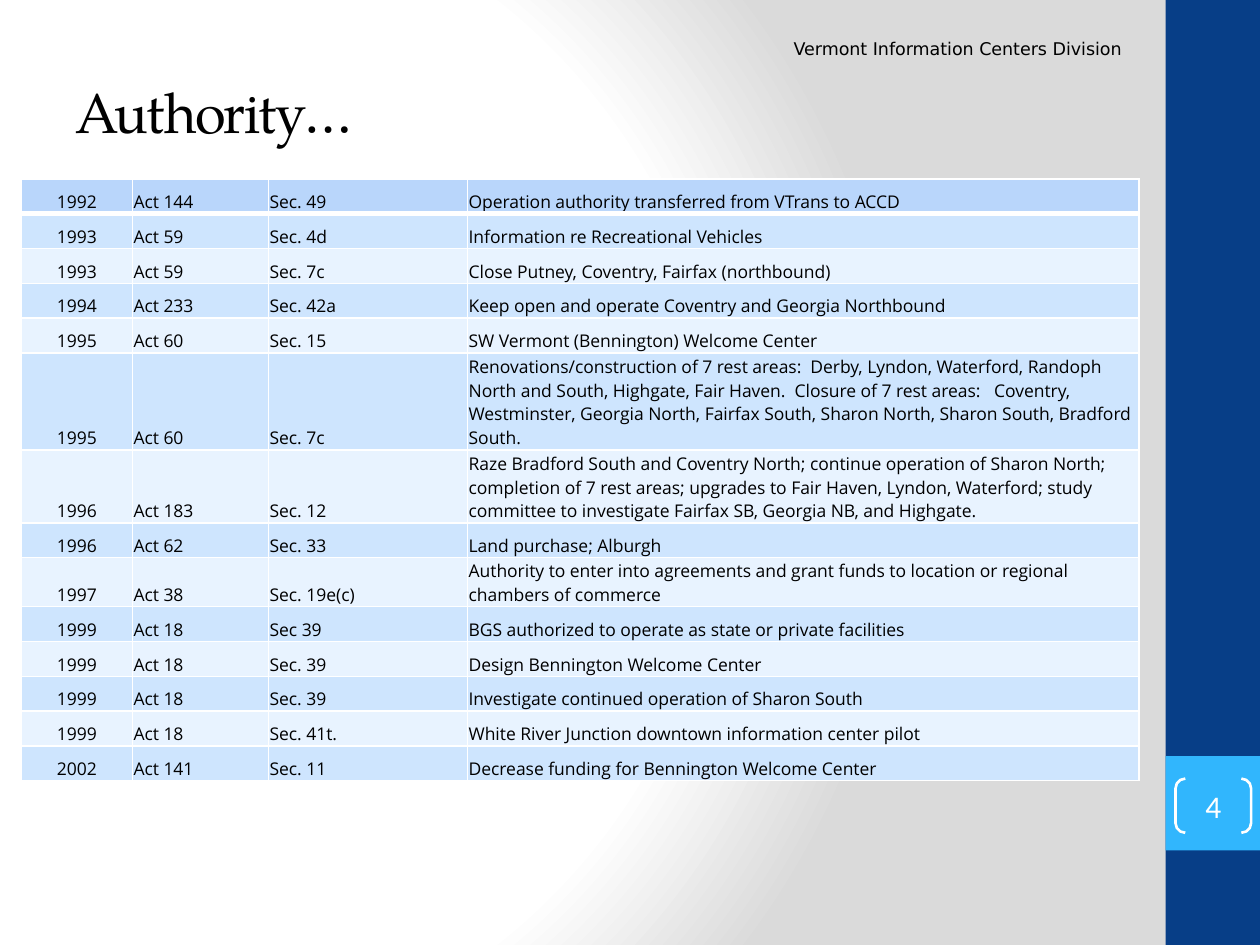
from lxml.etree import SubElement
from pptx import Presentation
from pptx.dml.color import RGBColor
from pptx.enum.shapes import MSO_SHAPE
from pptx.enum.text import MSO_ANCHOR, PP_ALIGN
from pptx.oxml import parse_xml
from pptx.oxml.ns import nsdecls, qn
from pptx.util import Inches, Pt

ACTS = [
    ("1992", "Act 144", "Sec. 49", "Operation authority transferred from VTrans to ACCD"),
    ("1993", "Act 59", "Sec. 4d", "Information re Recreational Vehicles"),
    ("1993", "Act 59", "Sec. 7c", "Close Putney, Coventry, Fairfax (northbound)"),
    ("1994", "Act 233", "Sec. 42a", "Keep open and operate Coventry and Georgia Northbound"),
    ("1995", "Act 60", "Sec. 15", "SW Vermont (Bennington) Welcome Center"),
    ("1995", "Act 60", "Sec. 7c",
     "Renovations/construction of 7 rest areas:  Derby, Lyndon, Waterford, Randoph North and South, "
     "Highgate, Fair Haven.  Closure of 7 rest areas:   Coventry, Westminster, Georgia North, "
     "Fairfax South, Sharon North, Sharon South, Bradford South."),
    ("1996", "Act 183", "Sec. 12",
     "Raze Bradford South and Coventry North; continue operation of Sharon North; completion of "
     "7 rest areas; upgrades to Fair Haven, Lyndon, Waterford; study committee to investigate "
     "Fairfax SB, Georgia NB, and Highgate."),
    ("1996", "Act 62", "Sec. 33", "Land purchase; Alburgh"),
    ("1997", "Act 38", "Sec. 19e(c)",
     "Authority to enter into agreements and grant funds to location or regional chambers of commerce"),
    ("1999", "Act 18", "Sec 39", "BGS authorized to operate as state or private facilities"),
    ("1999", "Act 18", "Sec. 39", "Design Bennington Welcome Center"),
    ("1999", "Act 18", "Sec. 39", "Investigate continued operation of Sharon South"),
    ("1999", "Act 18", "Sec. 41t.", "White River Junction downtown information center pilot"),
    ("2002", "Act 141", "Sec. 11", "Decrease funding for Bennington Welcome Center"),
]
COLUMN_WIDTHS = [0.88, 1.08, 1.58, 5.33]
TABLE_WIDTH = 8.88
CHARACTERS_PER_LINE = 73
HEIGHTS_BY_LINE_COUNT = {1: 0.276, 2: 0.39, 3: 0.58, 4: 0.77}
HEADER_FILL = "B9D6FB"
BAND_FILLS = ["E8F3FF", "CEE5FE"]
BACKGROUND_STOPS = [(0, "FFFFFF"), (75, "FFFFFF"), (100, "DADADA")]
SIDEBAR = [((9.25, 0, 0.75, 7.5), "073E87"), ((9.25, 6, 0.75, 0.75), "31B6FD")]


def color(value):
    return RGBColor.from_string(value)


def set_background(slide):
    stops = "".join(
        f'<a:gs pos="{position * 1000}"><a:srgbClr val="{value}"/></a:gs>'
        for position, value in BACKGROUND_STOPS
    )
    slide.background.fill.solid()
    properties = slide.background._cSld.bg.bgPr
    properties.replace(properties[0], parse_xml(
        f'<a:gradFill {nsdecls("a")} rotWithShape="1"><a:gsLst>{stops}</a:gsLst>'
        '<a:path path="circle"><a:fillToRect l="20000" t="50000" r="100000" b="50000"/></a:path>'
        '</a:gradFill>'
    ))


def write(text_frame, text, size, font, font_color="000000", align=PP_ALIGN.LEFT):
    text_frame.text = text
    paragraph = text_frame.paragraphs[0]
    paragraph.alignment = align
    run = paragraph.runs[0]
    run.font.size = Pt(size)
    run.font.name = font
    run.font.color.rgb = color(font_color)
    return run


def add_text(slide, box, *style, anchor=MSO_ANCHOR.TOP, **options):
    text_frame = slide.shapes.add_textbox(*map(Inches, box)).text_frame
    text_frame.word_wrap = True
    text_frame.vertical_anchor = anchor
    return write(text_frame, *style, **options)


def add_border(cell, side, width):
    line = SubElement(cell._tc.get_or_add_tcPr(), qn(f"a:ln{side}"), w=str(Pt(width)))
    fill = SubElement(line, qn("a:solidFill"))
    SubElement(fill, qn("a:srgbClr"), val="FFFFFF")


def row_height(act):
    line_count = -(-len(act[-1]) // CHARACTERS_PER_LINE)
    return HEIGHTS_BY_LINE_COUNT[line_count]


def add_acts_table(slide):
    heights = [row_height(act) for act in ACTS]
    table = slide.shapes.add_table(
        len(ACTS), len(COLUMN_WIDTHS), Inches(0.17), Inches(1.42),
        Inches(TABLE_WIDTH), Inches(sum(heights)),
    ).table
    for column, width in zip(table.columns, COLUMN_WIDTHS):
        column.width = Inches(width)
    for row_index, act in enumerate(ACTS):
        table.rows[row_index].height = Inches(heights[row_index])
        for column_index, text in enumerate(act):
            cell = table.cell(row_index, column_index)
            cell.margin_left = cell.margin_right = cell.margin_top = Inches(0.01)
            cell.margin_bottom = 0
            cell.vertical_anchor = MSO_ANCHOR.BOTTOM
            align = PP_ALIGN.CENTER if column_index == 0 else PP_ALIGN.LEFT
            write(cell.text_frame, text, 10, "Open Sans", align=align)
            for side in "LRTB":
                under_header = (row_index, side) in [(0, "B"), (1, "T")]
                add_border(cell, side, 3 if under_header else 1)
            cell.fill.solid()
            cell.fill.fore_color.rgb = color(BAND_FILLS[row_index % 2] if row_index else HEADER_FILL)


def add_sidebar(slide):
    for box, fill in SIDEBAR:
        shape = slide.shapes.add_shape(MSO_SHAPE.RECTANGLE, *map(Inches, box))
        shape.shadow.inherit = False
        shape.fill.solid()
        shape.fill.fore_color.rgb = color(fill)
        shape.line.fill.background()


def add_page_number(slide):
    bracket = slide.shapes.add_shape(
        MSO_SHAPE.DOUBLE_BRACKET, Inches(9.33), Inches(6.18), Inches(0.6), Inches(0.43)
    )
    bracket.shadow.inherit = False
    bracket.adjustments[0] = 0.18
    bracket.fill.background()
    bracket.line.color.rgb = color("FFFFFF")
    bracket.line.width = Pt(1.5)
    text_frame = bracket.text_frame
    text_frame.margin_left = text_frame.margin_right = 0
    text_frame.margin_top = text_frame.margin_bottom = 0
    text_frame.vertical_anchor = MSO_ANCHOR.MIDDLE
    write(text_frame, "4", 18, "Calibri", "FFFFFF", PP_ALIGN.CENTER)


def main():
    presentation = Presentation()
    presentation.slide_width = Inches(10)
    presentation.slide_height = Inches(7.5)
    slide = presentation.slides.add_slide(presentation.slide_layouts[6])
    set_background(slide)
    add_sidebar(slide)
    title = add_text(slide, (0.5, 0.52, 8.33, 0.73), "Authority…", 32, "TeX Gyre Pagella",
                     anchor=MSO_ANCHOR.MIDDLE)
    title.font._element.set("spc", "-100")
    add_acts_table(slide)
    add_page_number(slide)
    add_text(slide, (5.92, 0.25, 3.08, 0.27), "Vermont Information Centers Division", 10,
             "DejaVu Sans", align=PP_ALIGN.RIGHT)
    presentation.save("out.pptx")


if __name__ == "__main__":
    main()
